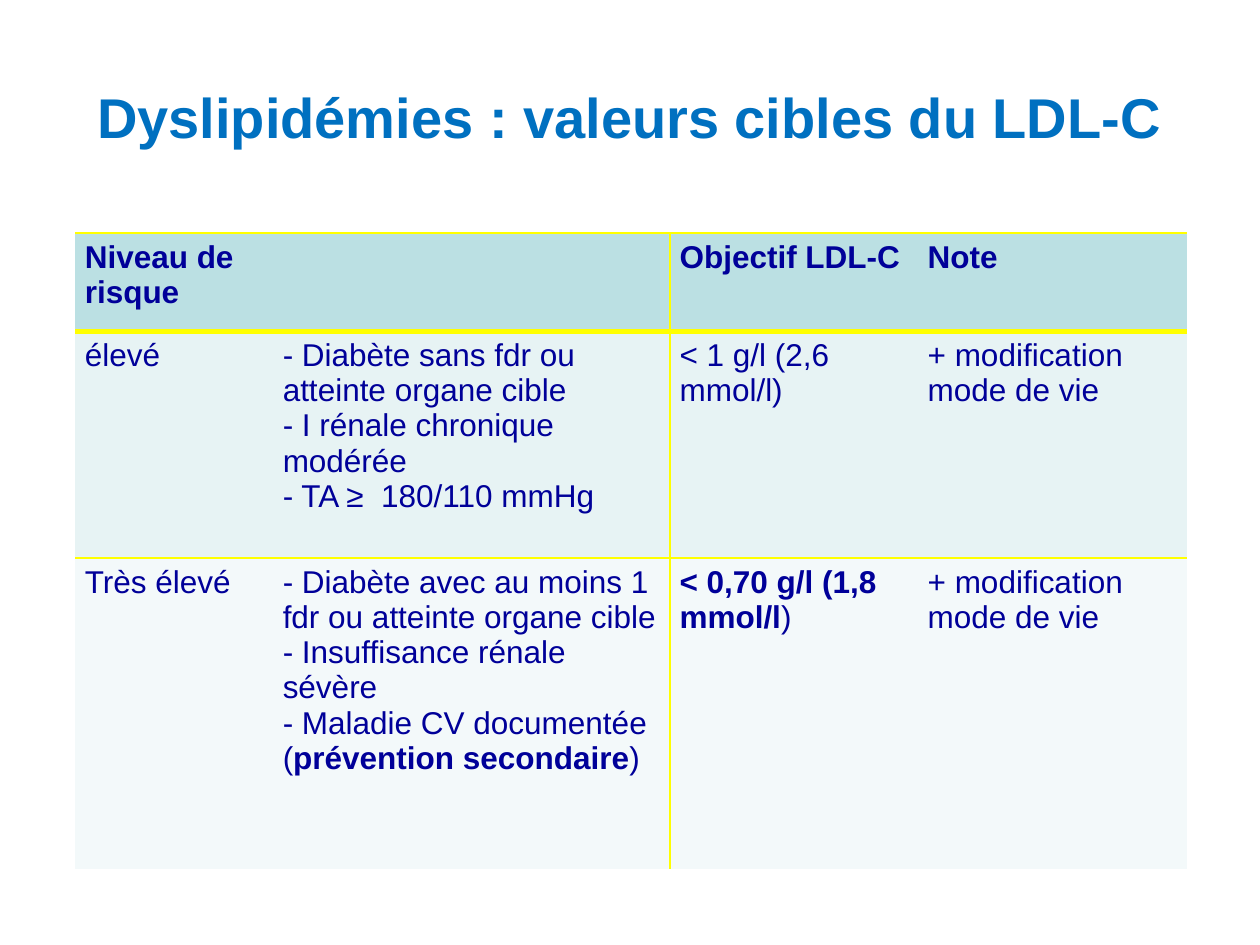
from lxml import etree
from pptx import Presentation
from pptx.dml.color import RGBColor
from pptx.enum.text import MSO_ANCHOR, PP_ALIGN
from pptx.oxml.ns import qn
from pptx.util import Cm, Pt

CENTER = PP_ALIGN.CENTER
MIDDLE = MSO_ANCHOR.MIDDLE
TITLE_ONLY = 5

COLORS = {
    "title": "0070C0",
    "text": "000099",
    "rule": "FFFF00",
    "header": "BBE0E3",
    "high": "E7F3F4",
    "very_high": "F3F9FA",
}
COLUMN_WIDTHS = [3.99, 8, 5, 5.41]
ROW_HEIGHTS = [1.98, 4.57, 6.27]
ROW_FILLS = ["header", "high", "very_high"]
LIFESTYLE = "+ modification mode de vie"

# A cell is a list of paragraphs, a paragraph a list of (text, bold) runs.
RISK_LEVELS = [
    [
        [[("Niveau de risque", True)]],
        [],
        [[("Objectif LDL-C", True)]],
        [[("Note", True)]],
    ],
    [
        [[("élevé", False)]],
        [
            [("- Diabète sans fdr ou atteinte organe cible", False)],
            [("- I rénale chronique modérée", False)],
            [("- TA ≥  180/110 mmHg", False)],
        ],
        [[("< 1 g/l (2,6 mmol/l)", False)]],
        [[(LIFESTYLE, False)]],
    ],
    [
        [[("Très élevé", False)]],
        [
            [("- Diabète avec au moins 1 fdr ou atteinte organe cible", False)],
            [("- Insuffisance rénale sévère", False)],
            [
                ("- Maladie CV documentée (", False),
                ("prévention secondaire", True),
                (")", False),
            ],
        ],
        [[("< 0,70 g/l (1,8 mmol/l", True), (")", False)]],
        [[(LIFESTYLE, False)]],
    ],
]


class SlideBuilder:
    """Holds the text style and the slide being filled."""

    font = "Arial"

    def __init__(self, slide):
        self.slide = slide

    def style(self, paragraph, size, color):
        paragraph.font.name = self.font
        paragraph.font.size = Pt(size)
        paragraph.font.color.rgb = RGBColor.from_string(COLORS[color])

    def title(self, wording, left, top, width, height):
        title = self.slide.shapes.title
        title.left, title.top = Cm(left), Cm(top)
        title.width, title.height = Cm(width), Cm(height)
        title.text_frame.text = wording
        title.text_frame.vertical_anchor = MIDDLE
        heading = title.text_frame.paragraphs[0]
        heading.alignment = CENTER
        heading.font.bold = True
        self.style(heading, 32, "title")

    def table(self, rows, left, top):
        table = self.slide.shapes.add_table(
            len(rows), len(COLUMN_WIDTHS), Cm(left), Cm(top),
            Cm(sum(COLUMN_WIDTHS)), Cm(sum(ROW_HEIGHTS)),
        ).table
        for column, width in zip(table.columns, COLUMN_WIDTHS):
            column.width = Cm(width)
        for r, (row, height) in enumerate(zip(rows, ROW_HEIGHTS)):
            table.rows[r].height = Cm(height)
            for c, paragraphs in enumerate(row):
                cell = table.cell(r, c)
                cell.fill.solid()
                cell.fill.fore_color.rgb = RGBColor.from_string(COLORS[ROW_FILLS[r]])
                self.cell_text(cell, paragraphs)
                self.borders(cell, self.rule_widths(r, c))

    def cell_text(self, cell, paragraphs):
        cell.margin_left = cell.margin_right = Cm(0.19)
        cell.margin_top = cell.margin_bottom = Cm(0.13)
        frame = cell.text_frame
        for i, runs in enumerate(paragraphs or [[]]):
            paragraph = frame.add_paragraph() if i else frame.paragraphs[0]
            self.style(paragraph, 18, "text")
            for wording, bold in runs:
                run = paragraph.add_run()
                run.text = wording
                run.font.bold = bold

    @staticmethod
    def rule_widths(row, column):
        """Rules part the rows, and the risk criteria from the targets."""
        horizontal = [1, 3, 1, 0]
        vertical = [0, 0, 1, 0, 0]
        return {
            "lnL": vertical[column],
            "lnR": vertical[column + 1],
            "lnT": horizontal[row],
            "lnB": horizontal[row + 1],
        }

    @staticmethod
    def borders(cell, widths):
        properties = cell._tc.get_or_add_tcPr()
        for position, (side, width) in enumerate(widths.items()):
            line = etree.Element(qn(f"a:{side}"), w=str(Pt(width)))
            if width:
                fill = etree.SubElement(line, qn("a:solidFill"))
                etree.SubElement(fill, qn("a:srgbClr"), val=COLORS["rule"])
            else:
                etree.SubElement(line, qn("a:noFill"))
            properties.insert(position, line)


def main():
    deck = Presentation()
    deck.slide_width, deck.slide_height = Cm(25.4), Cm(19.05)
    builder = SlideBuilder(deck.slides.add_slide(deck.slide_layouts[TITLE_ONLY]))
    builder.title("Dyslipidémies : valeurs cibles du LDL-C", 1.27, 0.76, 22.86, 3.18)
    builder.table(RISK_LEVELS, 1.52, 4.7)
    deck.save("out.pptx")


if __name__ == "__main__":
    main()
